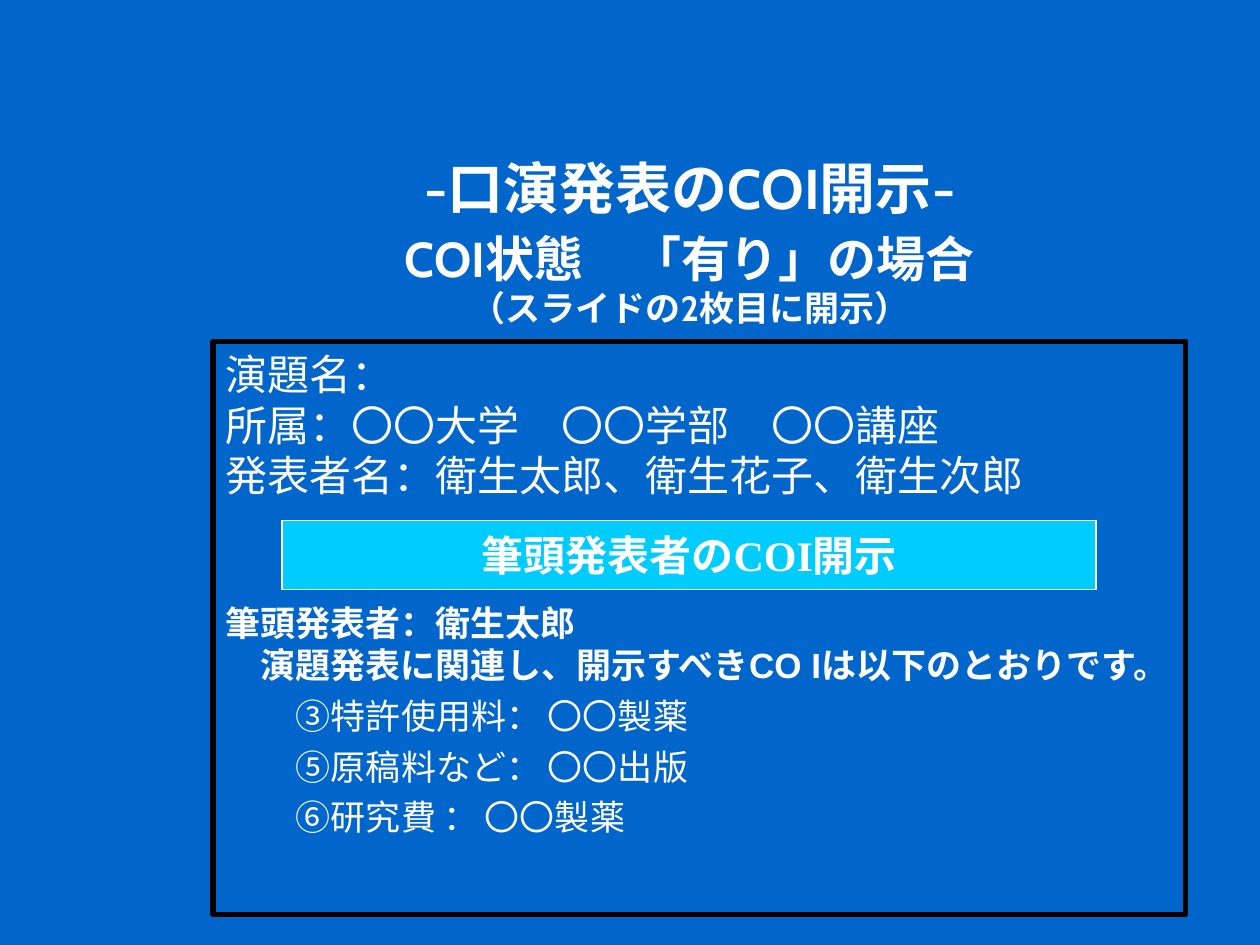
from pptx import Presentation
from pptx.dml.color import RGBColor
from pptx.enum.shapes import MSO_SHAPE as Shape
from pptx.enum.text import MSO_ANCHOR as Anchor, PP_ALIGN as Align
from pptx.oxml.ns import qn
from pptx.util import Inches, Pt
from lxml.etree import SubElement

WHITE = "FFFFFF"


def color(code):
    return RGBColor.from_string(code)


def place(shape, left, top, width, height):
    shape.left, shape.top = Inches(left), Inches(top)
    shape.width, shape.height = Inches(width), Inches(height)


def write(frame, text, size, font="Arial", bold=False, align=Align.LEFT,
          before=0, lines=None, left=0, hang=0, tab=None):
    """Fill the empty first paragraph, or add one; tab is in inches."""
    para = frame.paragraphs[0]
    if para.runs:
        para = frame.add_paragraph()
    para.alignment = align
    para.space_before = Pt(before)
    if lines:
        para.line_spacing = lines
    props = para._p.get_or_add_pPr()
    props.set("marL", str(Inches(left)))
    props.set("indent", str(Inches(-hang)))
    if tab:
        stops = SubElement(props, qn("a:tabLst"))
        SubElement(stops, qn("a:tab"), pos=str(Inches(tab)), algn="l")
    run = para.add_run()
    run.text = text
    run.font.size, run.font.name, run.font.bold = Pt(size), font, bold
    run.font.color.rgb = color(WHITE)


def add_text(slide, *box):
    shape = slide.shapes.add_textbox(*map(Inches, box))
    shape.text_frame.word_wrap = True
    return shape.text_frame


def add_rect(slide, *box, fill=None, line=WHITE, width=1):
    rect = slide.shapes.add_shape(Shape.RECTANGLE, *map(Inches, box))
    rect.shadow.inherit = False
    if fill:
        rect.fill.solid()
        rect.fill.fore_color.rgb = color(fill)
    else:
        rect.fill.background()
    rect.line.color.rgb = color(line)
    rect.line.width = Pt(width)
    return rect.text_frame


def add_title(slide):
    title = slide.shapes.title
    place(title, 1.85, 1.74, 7.25, 0.92)
    frame = title.text_frame
    frame.vertical_anchor = Anchor.BOTTOM
    for text, size, before in [("-口演発表のCOI開示-", 32, 0),
                               ("COI状態\u3000「有り」の場合", 28, 4),
                               ("（スライドの2枚目に開示）", 20, 0)]:
        write(frame, text, size, font="Cabin", bold=True,
              align=Align.CENTER, before=before)


def add_talk(slide):
    frame = add_text(slide, 1.69, 2.72, 7.56, 1.31)
    for text in ["演題名：", "所属：〇〇大学　〇〇学部　〇〇講座",
                 "発表者名：衛生太郎、衛生花子、衛生次郎"]:
        write(frame, text, 24)


def add_items(slide):
    frame = add_text(slide, 1.69, 4.79, 7.72, 2.47)
    write(frame, "筆頭発表者：衛生太郎", 20, bold=True, lines=0.8)
    write(frame, "演題発表に関連し、開示すべきCO Iは以下のとおりです。", 20,
          bold=True, lines=0.8, before=5, left=0.38, hang=0.1)
    for name, source, tab in [("③特許使用料：", "〇〇製薬", 3.13),
                              ("⑤原稿料など：", "〇〇出版", 3.19),
                              ("⑥研究費 ：", "〇〇製薬", 3.41)]:
        write(frame, f"{name}\t{source}", 20, font="Cabin", before=5,
              left=0.56, tab=tab)


def main():
    deck = Presentation()
    deck.slide_width, deck.slide_height = Inches(10), Inches(7.5)
    slide = deck.slides.add_slide(deck.slide_layouts[5])
    back = slide.background.fill
    back.solid()
    back.fore_color.rgb = color("0066CC")

    add_title(slide)
    add_rect(slide, 1.69, 2.71, 7.72, 4.55, line="000000", width=3)
    add_talk(slide)
    band = add_rect(slide, 2.24, 4.13, 6.46, 0.55, fill="00CCFF")
    band.vertical_anchor = Anchor.MIDDLE
    write(band, "筆頭発表者のCOI開示", 24, font="Times New Roman", bold=True,
          align=Align.CENTER)
    add_items(slide)
    deck.save("out.pptx")


if __name__ == "__main__":
    main()
